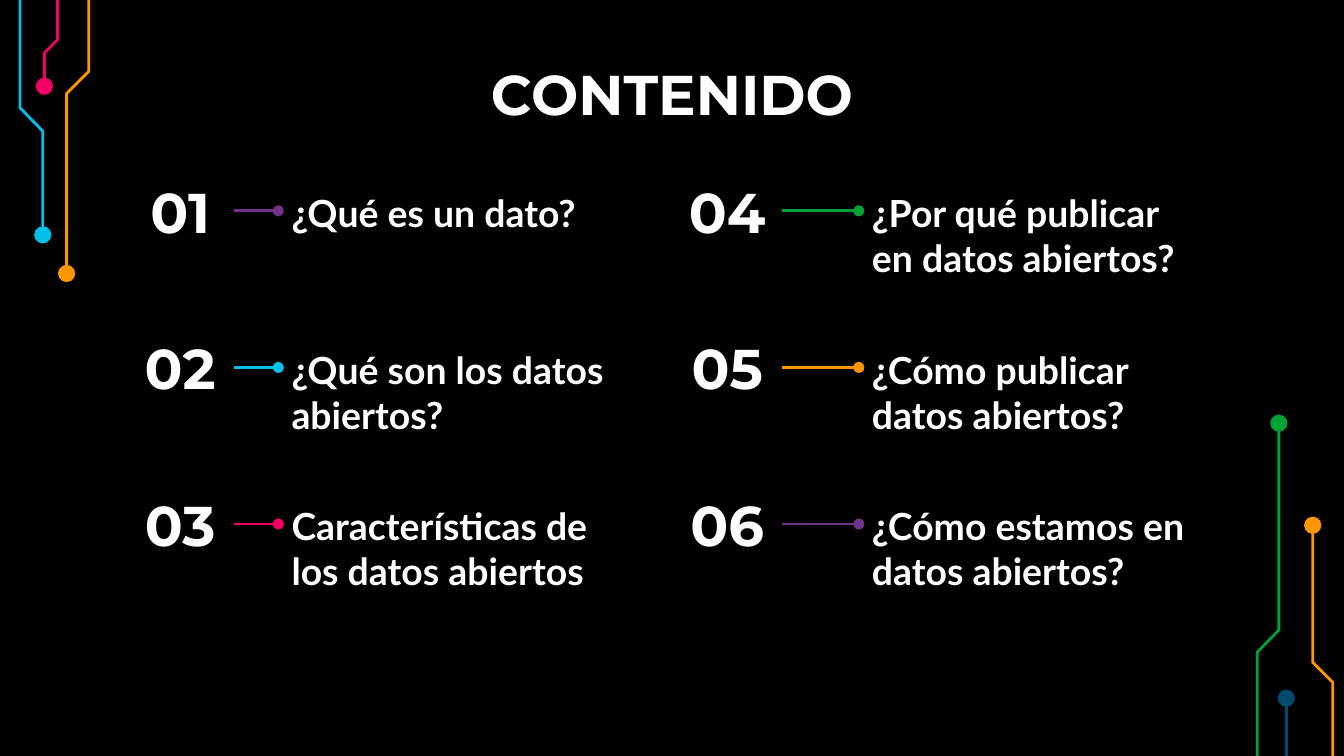
from pptx import Presentation
from pptx.util import Cm, Pt
from pptx.dml.color import RGBColor
from pptx.enum.shapes import MSO_CONNECTOR as Conn, MSO_SHAPE as Shape
from pptx.enum.text import MSO_ANCHOR as Anchor, MSO_AUTO_SIZE as Fit, PP_ALIGN as Align
from pptx.oxml.ns import qn
from lxml.etree import SubElement as sub

# Content
TITLE = "CONTENIDO"
ITEMS = [
    ("¿Qué es un dato?", "703387"),
    ("¿Qué son los datos abiertos?", "00BFE9"),
    ("Características de los datos abiertos", "F20066"),
    ("¿Por qué publicar en datos abiertos?", "00A136"),
    ("¿Cómo publicar\ndatos abiertos?", "FF9600"),
    ("¿Cómo estamos en datos abiertos?", "703387"),
]

# Circuit traces in cm; each ends in a dot
TRACES = [
    ("00BFE9", [(0.38, 0), (0.38, 2.04), (0.81, 2.48), (0.81, 4.44)]),
    ("F20066", [(1.09, 0), (1.09, 0.75), (0.84, 1), (0.84, 1.63)]),
    ("FF9600", [(1.68, 0), (1.68, 1.35), (1.26, 1.77), (1.26, 5.17)]),
    ("00A137", [(23.76, 14.29), (23.76, 12.33), (24.17, 11.91), (24.17, 8)]),
    ("FF9600", [(25.19, 14.29), (25.19, 12.9), (24.81, 12.52), (24.81, 9.93)]),
    ("004A6D", [(24.31, 14.29), (24.31, 13.2)]),
]

# Grid in cm: number left, line start, text left for each column
COLS = [(2.39, 4.42, 5.26), (12.73, 14.78, 16.23)]
ROWS, TOP, STEP, HIGH = 3, 3.35, 2.96, 1.27
DOT = 0.3

deck = Presentation()
deck.slide_width, deck.slide_height = Cm(25.4), Cm(14.29)
slide = deck.slides.add_slide(deck.slide_layouts[5])
shapes = slide.shapes


def color(text):
    return RGBColor.from_string(text)


def paint(fill, tint):
    fill.solid()
    fill.fore_color.rgb = color(tint)


def write(box, text, font, size, align=Align.LEFT, anchor=Anchor.TOP):
    frame = box.text_frame
    frame.text = text
    frame.word_wrap = True
    frame.auto_size = Fit.NONE
    frame.vertical_anchor = anchor
    frame.margin_left = frame.margin_right = Cm(0.25)
    frame.margin_top = frame.margin_bottom = Cm(0.25)
    for para in frame.paragraphs:
        para.alignment = align
        for run in para.runs:
            run.font.name, run.font.size, run.font.bold = font, Pt(size), True
            run.font.color.rgb = color("FFFFFF")


def add_text(x, y, wide, *style):
    write(shapes.add_textbox(Cm(x), Cm(y), Cm(wide), Cm(HIGH)), *style)


def add_line(start, end, tint, oval=False):
    ends = [Cm(v) for v in (*start, *end)]
    line = shapes.add_connector(Conn.STRAIGHT, *ends)
    line.line.width = Pt(1.5)
    line.line.color.rgb = color(tint)
    if oval:
        sub(line.line._get_or_add_ln(), qn("a:tailEnd"), type="oval")
    sub(line._element.spPr, qn("a:effectLst"))


def add_trace(points, tint):
    if len(points) == 2:
        add_line(*points, tint)
    else:
        first, *rest = [(Cm(x), Cm(y)) for x, y in points]
        pen = shapes.build_freeform(*first)
        pen.add_line_segments(rest, close=False)
        trace = pen.convert_to_shape()
        trace.shadow.inherit = False
        trace.fill.background()
        trace.line.width = Pt(1.5)
        trace.line.color.rgb = color(tint)
    x, y = points[-1]
    dot = shapes.add_shape(Shape.OVAL, Cm(x - DOT / 2), Cm(y - DOT / 2), Cm(DOT), Cm(DOT))
    dot.shadow.inherit = False
    paint(dot.fill, tint)
    dot.line.width = Pt(0.75)
    dot.line.color.rgb = color(tint)


# Background and traces
paint(slide.background.fill, "000000")
for tint, points in TRACES:
    add_trace(points, tint)

# Title
title = shapes.title
title.left, title.top, title.width, title.height = Cm(2), Cm(0.87), Cm(21.4), Cm(1.6)
write(title, TITLE, "Montserrat", 30, Align.CENTER)

# Numbered items, filled column by column
for i, (text, tint) in enumerate(ITEMS):
    col, row = divmod(i, ROWS)
    num, start, left = COLS[col]
    y = TOP + row * STEP
    mid = y + HIGH / 2
    add_text(num, y, 2.03, f"{i + 1:02}", "Montserrat", 30, Align.CENTER, Anchor.MIDDLE)
    add_text(left, y, 6.78, text, "Lato", 20)
    add_line((start, mid), (left, mid), tint, oval=True)

deck.save("out.pptx")
